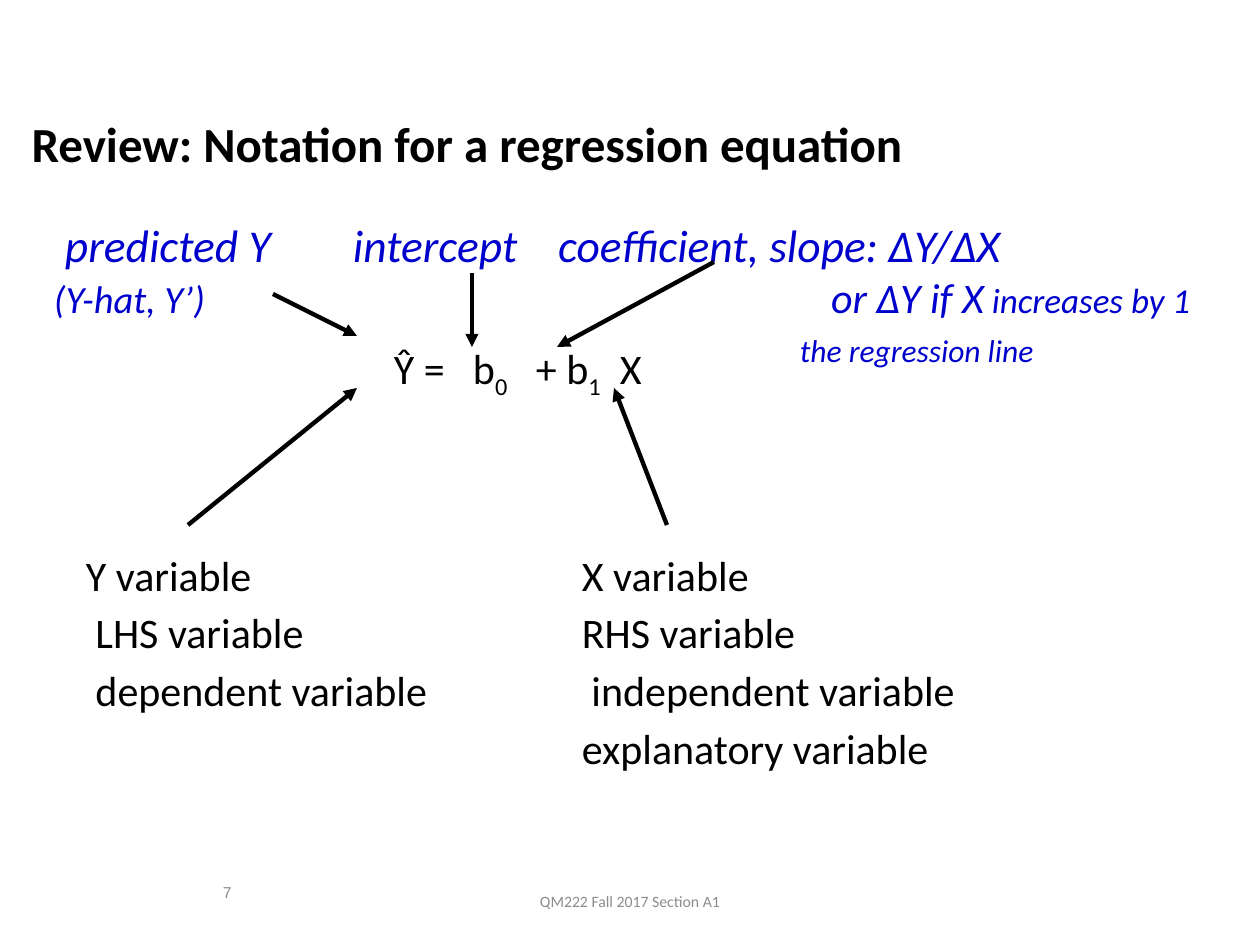
from dataclasses import dataclass

from lxml.etree import SubElement
from pptx import Presentation
from pptx.dml.color import RGBColor as Rgb
from pptx.enum.shapes import MSO_CONNECTOR as Link
from pptx.enum.text import MSO_ANCHOR as Anchor, MSO_AUTO_SIZE as Fit, PP_ALIGN as Align
from pptx.oxml.ns import qn
from pptx.util import Emu, Pt


@dataclass(frozen=True)
class Theme:
    face: str = "Calibri"
    plain: str = "Arial"
    ink: Rgb = Rgb(0, 0, 0)
    blue: Rgb = Rgb(0, 0, 0xCC)
    gray: Rgb = Rgb(0x8C, 0x8C, 0x8C)
    title: int = 28
    label: int = 26
    body: int = 24
    hat: int = 22
    minor: int = 20
    note: int = 18
    foot: int = 9
    line: float = 2.5


THEME = Theme()
SCALE = 914400 / 126
WIDE, HIGH = 1260, 945

TITLE = "Review: Notation for a regression equation"
TITLE_BOX = (19, 84, 1229, 126)

LABELS = [
    ((65, 217, 250, 56), THEME.label, ["predicted Y"]),
    ((353, 217, 190, 56), THEME.label, ["intercept"]),
    ((558, 217, 500, 56), THEME.label, ["coefficient, slope: ∆Y/∆X"]),
    ((54, 275, 200, 48), THEME.hat, ["(Y-hat, Y’)"]),
    ((831, 272, 420, 52), THEME.body, ["or ∆Y if X", " increases by 1"]),
    ((800, 331, 300, 40), THEME.note, ["the regression line"]),
]

TERMS = [("Ŷ =", ""), ("b", "0"), ("+ b", "1"), ("X", "")]
TERM_BOX = (394, 343, 300, 52)
STOPS = [79, 142, 226]

COLUMNS = [
    (86, ["Y variable", " LHS variable", " dependent variable"]),
    (582, ["X variable", "RHS variable", " independent variable", "explanatory variable"]),
]
COL_TOP, COL_WIDE, ROW = 555, 440, 58

ARROWS = [
    ((188, 525), (357, 388)),
    ((472, 273), (472, 347)),
    ((714, 262), (557, 347)),
    ((273, 294), (357, 336)),
    ((667, 525), (614, 388)),
]

FOOTERS = [
    ((223, 861, 166, 63), "7", THEME.plain, Align.LEFT),
    ((417, 876, 426, 50), "QM222 Fall 2017 Section A1", THEME.face, Align.CENTER),
]


def px(n):
    return Emu(round(n * SCALE))


def style(font, size, color=THEME.ink, face=THEME.face):
    font.name, font.size = face, Pt(size)
    font.color.rgb = color


def add_box(slide, box):
    frame = slide.shapes.add_textbox(*map(px, box)).text_frame
    frame.word_wrap = True
    frame.margin_left = frame.margin_right = frame.margin_top = frame.margin_bottom = 0
    return frame


def add_title(slide):
    shape = slide.shapes.title
    shape.left, shape.top, shape.width, shape.height = map(px, TITLE_BOX)
    frame = shape.text_frame
    frame.text = TITLE
    frame.auto_size = Fit.NONE
    frame.vertical_anchor = Anchor.MIDDLE
    para = frame.paragraphs[0]
    para.alignment, para.line_spacing = Align.LEFT, 0.9
    style(para.font, THEME.title)
    para.font.bold = True


def add_label(slide, box, size, parts):
    para = add_box(slide, box).paragraphs[0]
    style(para.font, size, THEME.blue)
    para.font.italic = True
    for i, part in enumerate(parts):
        run = para.add_run()
        run.text = part
        if i:
            run.font.size = Pt(THEME.minor)


def add_terms(slide):
    para = add_box(slide, TERM_BOX).paragraphs[0]
    style(para.font, THEME.body)
    tabs = para._p.get_or_add_pPr()
    stops = tabs.makeelement(qn("a:tabLst"), {})
    tabs.insert(0, stops)
    for stop in STOPS:
        SubElement(stops, qn("a:tab"), pos=str(px(stop)), algn="l")
    for i, (base, sub) in enumerate(TERMS):
        para.add_run().text = ("\t" if i else "") + base
        if sub:
            run = para.add_run()
            run.text = sub
            run.font._element.set("baseline", "-25000")


def add_column(slide, left, lines):
    frame = add_box(slide, (left, COL_TOP, COL_WIDE, ROW * len(lines)))
    frame.text = "\n".join(lines)
    for para in frame.paragraphs:
        style(para.font, THEME.body)
        para.line_spacing, para.space_after = 0.9, Pt(7)


def add_arrow(slide, start, end):
    line = slide.shapes.add_connector(Link.STRAIGHT, *map(px, start + end))
    line.line.color.rgb = THEME.ink
    line.line.width = Pt(THEME.line)
    SubElement(line.line._get_or_add_ln(), qn("a:tailEnd"), type="triangle")
    SubElement(line._element.spPr, qn("a:effectLst"))


def add_footer(slide, box, text, face, align):
    frame = add_box(slide, box)
    frame.text = text
    frame.vertical_anchor = Anchor.MIDDLE
    para = frame.paragraphs[0]
    para.alignment = align
    style(para.font, THEME.foot, THEME.gray, face)


def main():
    deck = Presentation()
    deck.slide_width, deck.slide_height = px(WIDE), px(HIGH)
    slide = deck.slides.add_slide(deck.slide_layouts[5])
    add_title(slide)
    for label in LABELS:
        add_label(slide, *label)
    add_terms(slide)
    for column in COLUMNS:
        add_column(slide, *column)
    for arrow in ARROWS:
        add_arrow(slide, *arrow)
    for footer in FOOTERS:
        add_footer(slide, *footer)
    deck.save("out.pptx")


if __name__ == "__main__":
    main()
